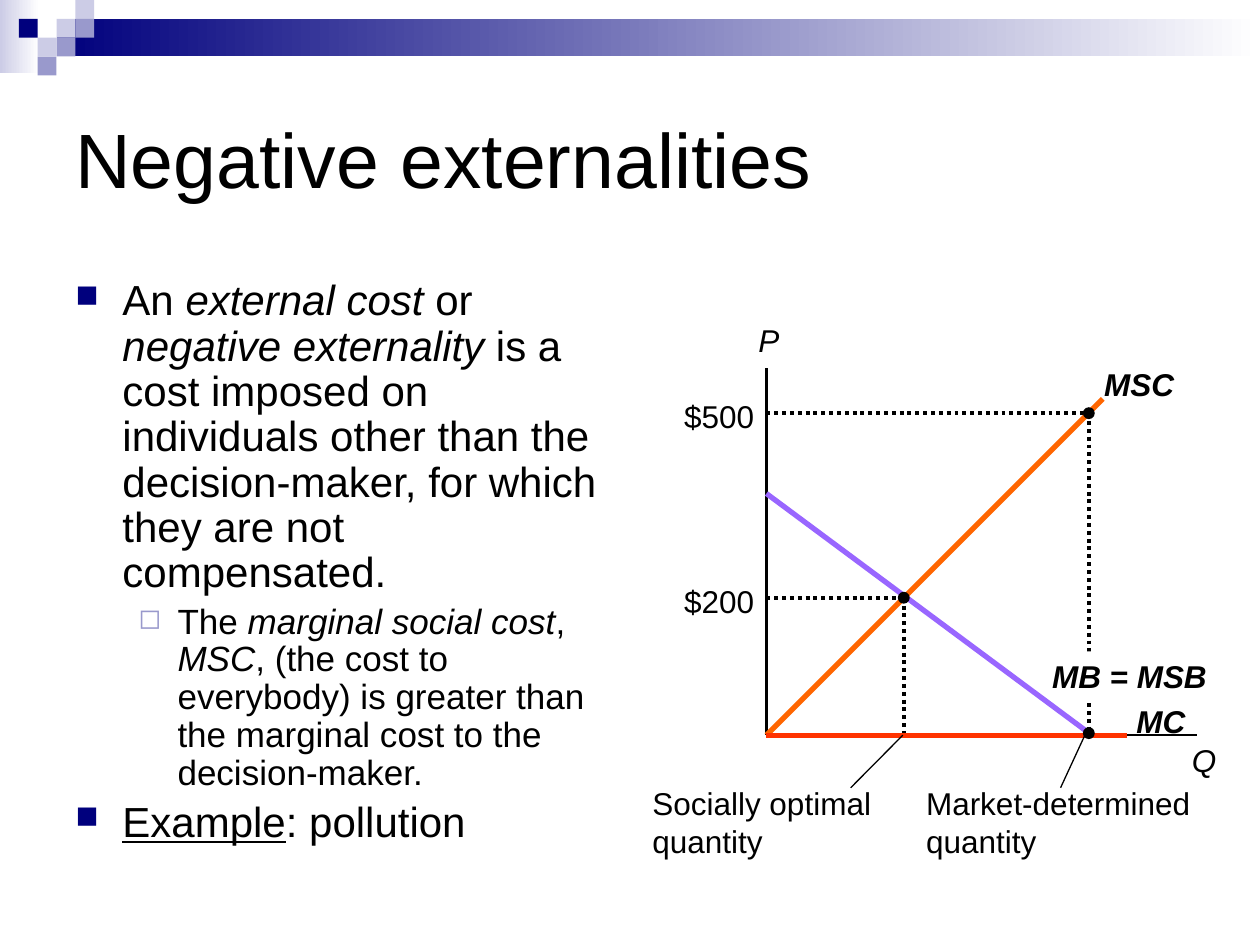
"""Build a slide on negative externalities with a cost and benefit diagram."""
from dataclasses import dataclass, field
from typing import NamedTuple, Optional

from lxml import etree
from pptx import Presentation
from pptx import util as u
from pptx.dml.color import RGBColor
from pptx.enum import dml, shapes, text
from pptx.oxml.ns import qn


@dataclass(frozen=True)
class Theme:
    font: str = "Arial"
    black: str = "000000"
    white: str = "FFFFFF"
    navy: str = "00007D"
    lavender: str = "9999CC"
    pale: str = "CCCCE6"
    orange: str = "FF6600"
    purple: str = "9966FF"
    red: str = "FF3300"
    title: float = 44
    body: float = 24
    detail: float = 20
    label: float = 18
    curve: float = 3
    guide: float = 2.25
    axis: float = 1.5
    hairline: float = 0.75


THEME = Theme()


class Box(NamedTuple):
    left: float
    top: float
    width: float
    height: float


class Point(NamedTuple):
    x: float
    y: float


class Run(NamedTuple):
    words: str
    italic: bool = False
    bold: bool = False
    underline: bool = False


class Bullet(NamedTuple):
    symbol: str
    color: str
    percent: int
    margin: float
    hang: float
    size: float
    level: int


class Item(NamedTuple):
    bullet: Bullet
    runs: list[Run]


class Segment(NamedTuple):
    start: Point
    end: Point
    color: str
    weight: float
    dotted: bool = False


@dataclass(frozen=True)
class Label:
    run: Run
    box: Box
    align: text.PP_ALIGN = text.PP_ALIGN.LEFT
    fill: Optional[str] = None
    size: float = field(default=THEME.label)


CELL = 0.38
MOSAIC = [(3, 1, THEME.pale), (4, 0, THEME.pale), (4, 1, THEME.lavender), (2, 2, THEME.pale),
          (1, 1, THEME.navy), (3, 2, THEME.lavender), (2, 3, THEME.lavender)]

MAIN = Bullet("■", THEME.navy, 75, 0.95, 0.95, THEME.body, 0)
SUB = Bullet("◻", THEME.lavender, 80, 2.06, 0.79, THEME.detail, 1)
ITEMS = [
    Item(MAIN, [Run("An "), Run("external cost", italic=True), Run(" or "),
                Run("negative externality", italic=True),
                Run(" is a cost imposed on individuals other than the decision-maker, "
                    "for which they are not compensated.")]),
    Item(SUB, [Run("The "), Run("marginal social cost", italic=True), Run(", "),
               Run("MSC", italic=True),
               Run(", (the cost to everybody) is greater than the marginal cost "
                   "to the decision-maker.")]),
    Item(MAIN, [Run("Example", underline=True), Run(": pollution")]),
]

ORIGIN = Point(15.45, 14.82)
OPTIMUM = Point(18.22, 12.05)
MARKET = Point(21.95, 8.33)
MARKET_QUANTITY = Point(MARKET.x, 14.78)
DOT = 0.21
LINE_HEIGHT = 1.02
CAPTION_TOP = 15.68


def guides(point: Point) -> list[Segment]:
    corners = [Point(ORIGIN.x, point.y), point, Point(point.x, ORIGIN.y)]
    return [Segment(a, b, THEME.black, THEME.guide, True) for a, b in zip(corners, corners[1:])]


AXES = [Segment(ORIGIN, end, THEME.black, THEME.axis)
        for end in (Point(ORIGIN.x, 7.41), Point(24.13, ORIGIN.y))]
CURVES = [
    Segment(ORIGIN, Point(22.23, 8.04), THEME.orange, THEME.curve),
    Segment(Point(ORIGIN.x, 9.95), Point(22.01, ORIGIN.y), THEME.purple, THEME.curve),
    Segment(ORIGIN, Point(22.71, ORIGIN.y), THEME.red, THEME.curve),
]
CALLOUTS = [
    Segment(Point(18.2, ORIGIN.y), Point(17.15, 15.88), THEME.black, THEME.hairline),
    Segment(Point(21.87, ORIGIN.y), Point(21.38, 15.88), THEME.black, THEME.hairline),
]
LABELS = [
    Label(Run("P", italic=True), Box(15.04, 6.35, 5.72, LINE_HEIGHT)),
    Label(Run("Q", italic=True), Box(23.5, 14.82, 1.27, LINE_HEIGHT), text.PP_ALIGN.RIGHT),
    Label(Run("MB", True, True), Box(20.96, 13.13, 4.34, LINE_HEIGHT), fill=THEME.white),
    Label(Run("= MSB", True, True), Box(22.12, 13.13, 3.07, LINE_HEIGHT)),
    Label(Run("MC", True, True), Box(22.66, 14.02, 2.11, LINE_HEIGHT)),
    Label(Run("MSC", True, True), Box(22.01, 7.24, 2.54, LINE_HEIGHT)),
    Label(Run("$500"), Box(13.54, 7.87, 2.11, LINE_HEIGHT)),
    Label(Run("$200"), Box(13.54, 11.61, 2.11, LINE_HEIGHT)),
    Label(Run("Socially optimal quantity"), Box(12.9, CAPTION_TOP, 5.08, 1.78)),
    Label(Run("Market-determined quantity"), Box(18.42, CAPTION_TOP, 5.92, 1.78)),
]


def color_of(value: str) -> RGBColor:
    return RGBColor.from_string(value)


def add_block(slide, box: Box, color: str, fade: bool = False,
              kind=shapes.MSO_SHAPE.RECTANGLE) -> None:
    shape = slide.shapes.add_shape(kind, *map(u.Cm, box))
    shape.shadow.inherit = False
    shape.line.fill.background()
    if fade:
        shape.fill.gradient()
        shape.fill.gradient_angle = 0
        for stop, value in zip(shape.fill.gradient_stops, (color, THEME.white)):
            stop.color.rgb = color_of(value)
    else:
        shape.fill.solid()
        shape.fill.fore_color.rgb = color_of(color)


def add_dot(slide, center: Point) -> None:
    size = DOT + 0.03
    box = Box(center.x - size / 2, center.y - size / 2, size, size)
    add_block(slide, box, THEME.black, kind=shapes.MSO_SHAPE.OVAL)


def add_segment(slide, segment: Segment) -> None:
    connector = slide.shapes.add_connector(
        shapes.MSO_CONNECTOR.STRAIGHT, *map(u.Cm, segment.start + segment.end))
    connector.line.color.rgb = color_of(segment.color)
    connector.line.width = u.Pt(segment.weight)
    if segment.dotted:
        connector.line.dash_style = dml.MSO_LINE.ROUND_DOT
    etree.SubElement(connector._element.spPr, qn("a:effectLst"))


def add_frame(slide, box: Box):
    shape = slide.shapes.add_textbox(*map(u.Cm, box))
    shape.text_frame.word_wrap = True
    return shape


def add_run(paragraph, run: Run, size: float) -> None:
    piece = paragraph.add_run()
    piece.text = run.words
    font = piece.font
    font.name, font.size = THEME.font, u.Pt(size)
    font.bold, font.italic, font.underline = run.bold, run.italic, run.underline
    font.color.rgb = color_of(THEME.black)


def add_label(slide, label: Label) -> None:
    shape = add_frame(slide, label.box)
    if label.fill:
        shape.fill.solid()
        shape.fill.fore_color.rgb = color_of(label.fill)
    shape.text_frame.auto_size = text.MSO_AUTO_SIZE.SHAPE_TO_FIT_TEXT
    paragraph = shape.text_frame.paragraphs[0]
    paragraph.alignment = label.align
    add_run(paragraph, label.run, label.size)


def set_bullet(paragraph, bullet: Bullet) -> None:
    properties = paragraph._p.get_or_add_pPr()
    properties.set("marL", str(u.Cm(bullet.margin)))
    properties.set("indent", str(-u.Cm(bullet.hang)))
    color = etree.SubElement(properties, qn("a:buClr"))
    etree.SubElement(color, qn("a:srgbClr"), val=bullet.color)
    etree.SubElement(properties, qn("a:buSzPct"), val=str(bullet.percent * 1000))
    etree.SubElement(properties, qn("a:buChar"), char=bullet.symbol)


def add_body(slide, box: Box, items: list[Item]) -> None:
    frame = add_frame(slide, box).text_frame
    for index, item in enumerate(items):
        paragraph = frame.add_paragraph() if index else frame.paragraphs[0]
        paragraph.level = item.bullet.level
        paragraph.line_spacing = 0.9
        paragraph.space_before = u.Pt(item.bullet.size * 0.2)
        set_bullet(paragraph, item.bullet)
        for run in item.runs:
            add_run(paragraph, run, item.bullet.size)


def main() -> None:
    presentation = Presentation()
    presentation.slide_width, presentation.slide_height = u.Cm(25.4), u.Cm(19.05)
    slide = presentation.slides.add_slide(presentation.slide_layouts[6])
    add_block(slide, Box(0, 0, 0.79, 1.47), THEME.pale, fade=True)
    add_block(slide, Box(3 * CELL, CELL, 25.4 - 3 * CELL, 2 * CELL), THEME.navy, fade=True)
    for column, row, color in MOSAIC:
        add_block(slide, Box(column * CELL, row * CELL, CELL, CELL), color)
    title = add_frame(slide, Box(1.27, 1.27, 22.86, 3.81)).text_frame
    title.vertical_anchor = text.MSO_ANCHOR.MIDDLE
    add_run(title.paragraphs[0], Run("Negative externalities"), THEME.title)
    add_body(slide, Box(1.27, 5.51, 11.43, 12.07), ITEMS)
    for segment in guides(MARKET) + guides(OPTIMUM) + AXES:
        add_segment(slide, segment)
    for label in LABELS:
        add_label(slide, label)
    for segment in CURVES + CALLOUTS:
        add_segment(slide, segment)
    for center in (OPTIMUM, MARKET, MARKET_QUANTITY):
        add_dot(slide, center)
    presentation.save("out.pptx")


if __name__ == "__main__":
    main()
